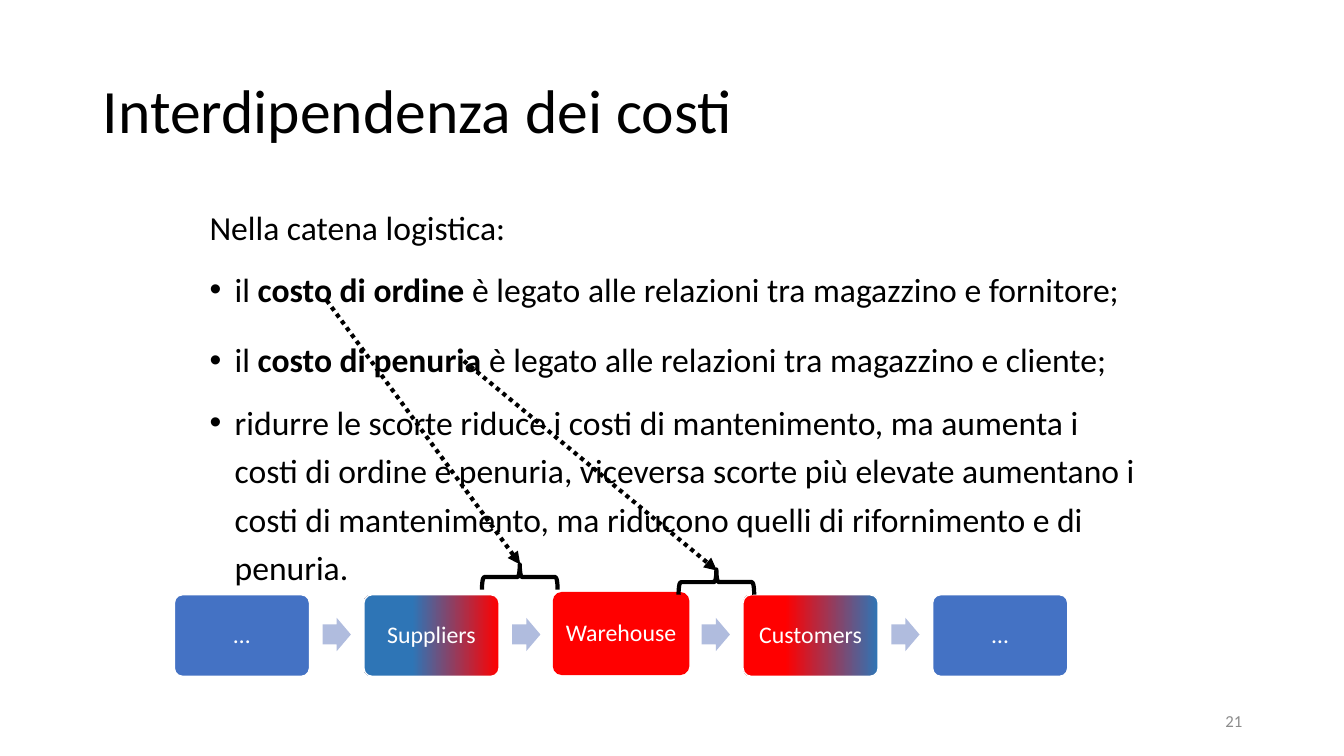
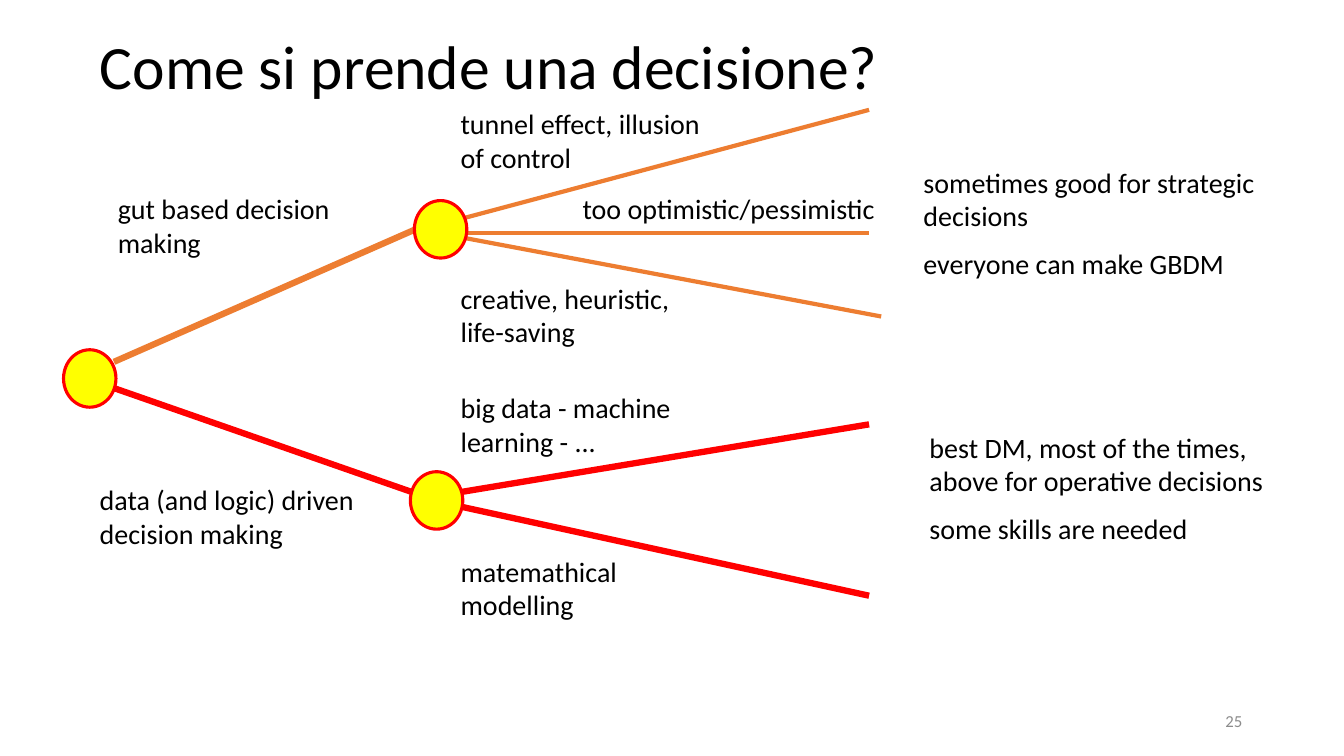
from dataclasses import dataclass
from typing import NamedTuple, Optional

import pptx
import pptx.dml.color
import pptx.enum.dml
import pptx.enum.shapes
import pptx.enum.text
import pptx.oxml
import pptx.oxml.ns
import pptx.oxml.xmlchemy
import pptx.util
from pptx.util import Inches

RGB = pptx.dml.color.RGBColor
Shapes = pptx.enum.shapes.MSO_SHAPE
Align = pptx.enum.text.PP_ALIGN
Anchor = pptx.enum.text.MSO_ANCHOR


@dataclass(frozen=True)
class Theme:
    font: str = "Calibri"
    title_size: float = 44
    body_size: float = 24
    label_size: float = 20
    stage_size: float = 17
    number_size: float = 12
    black: RGB = RGB(0, 0, 0)
    white: RGB = RGB(255, 255, 255)
    gray: RGB = RGB.from_string("8C8C8C")
    blue: RGB = RGB.from_string("4472C4")
    deep_blue: RGB = RGB.from_string("2E75B6")
    pale_blue: RGB = RGB.from_string("B0BCDE")
    red: RGB = RGB.from_string("FF0000")
    orange: RGB = RGB.from_string("ED7D31")
    yellow: RGB = RGB.from_string("FFFF00")


THEME = Theme()


class Box(NamedTuple):
    left: float
    top: float
    width: float
    height: float

    def emu(self) -> list[int]:
        return [Inches(value) for value in self]


class Paragraph(NamedTuple):
    """Text in which *asterisks* enclose bold words."""
    text: str
    spacing: float = 1.0
    bullet: bool = False
    hanging: float = 0


class Stage(NamedTuple):
    name: str
    fill: RGB
    border: RGB
    lift: float = 0
    gradient_to: Optional[RGB] = None
    gradient_end: float = 1


class Branch(NamedTuple):
    start: tuple[float, float]
    end: tuple[float, float]
    color: RGB
    width: float


class Label(NamedTuple):
    box: Box
    lines: tuple[str, ...]


STAGES = (
    Stage("…", THEME.blue, THEME.white),
    Stage("Suppliers", THEME.red, THEME.white, 0, THEME.deep_blue, 0.64),
    Stage("Warehouse", THEME.red, THEME.red, 0.02),
    Stage("Customers", THEME.deep_blue, THEME.white, 0, THEME.red, 0.69),
    Stage("…", THEME.blue, THEME.white),
)
STAGE_LEFT, STAGE_TOP, STAGE_PITCH = 1.73, 5.9, 1.88

COST_NOTES = (
    Paragraph("Nella catena logistica:", 1.4, hanging=0.25),
    Paragraph("il *costo di ordine *è legato alle relazioni tra magazzino e fornitore;",
              1.2, True, 0.25),
    Paragraph("il *costo di penuria *è legato alle relazioni tra magazzino e cliente;",
              1.4, True, 0.25),
    Paragraph("ridurre le scorte riduce i costi di mantenimento, ma aumenta i costi di "
              "ordine e penuria, viceversa scorte più elevate aumentano i costi di "
              "mantenimento, ma riducono quelli di rifornimento e di penuria.",
              1.2, True, 0.25),
)

BRANCHES = (
    Branch((1.13, 3.59), (4.11, 2.28), THEME.orange, 4.5),
    Branch((4.54, 2.18), (8.62, 1.09), THEME.orange, 3),
    Branch((4.47, 2.31), (8.62, 2.31), THEME.orange, 3),
    Branch((4.55, 2.35), (8.74, 3.14), THEME.orange, 3),
    Branch((1.13, 3.85), (4.11, 4.89), THEME.red, 4.5),
    Branch((4.52, 4.89), (8.62, 4.21), THEME.red, 4.5),
    Branch((4.45, 5), (8.62, 5.91), THEME.red, 4.5),
)
DECISION_POINTS = ((0.63, 3.47), (4.11, 1.99), (4.07, 4.68))
LABELS = (
    Label(Box(1.07, 1.85, 2.32, 0.77), ("gut based decision making",)),
    Label(Box(0.89, 4.74, 2.99, 0.77), ("data (and logic) driven decision making",)),
    Label(Box(4.47, 1.01, 2.68, 0.77), ("tunnel effect, illusion of control",)),
    Label(Box(5.68, 1.85, 3.64, 0.44), ("too optimistic/pessimistic",)),
    Label(Box(4.47, 2.74, 2.68, 0.77), ("creative, heuristic, life-saving",)),
    Label(Box(4.47, 3.83, 2.68, 0.77), ("big data - machine learning - ...",)),
    Label(Box(4.47, 5.45, 2.79, 0.77), ("matemathical modelling",)),
    Label(Box(9.06, 1.59, 3.73, 1.28),
          ("sometimes good for strategic decisions", "everyone can make GBDM")),
    Label(Box(9.12, 4.22, 3.51, 1.28),
          ("best DM, most of the times, above for operative decisions",
           "some skills are needed")),
)


def add_xml(parent: pptx.oxml.xmlchemy.BaseOxmlElement, tag: str, **attributes: str) -> None:
    element = pptx.oxml.parse_xml(f"<{tag} {pptx.oxml.ns.nsdecls('a')}/>")
    for key, value in attributes.items():
        element.set(key, value)
    parent.append(element)


def write(holder, *paragraphs: Paragraph, size: float, color: RGB = THEME.black,
          align: Align = Align.LEFT, anchor: Anchor = Anchor.TOP,
          space_before: float = 0, inset: tuple[float, float] = (0.1, 0.05)) -> None:
    """Fill a shape, text box or placeholder with formatted paragraphs."""
    frame = holder.text_frame
    frame.word_wrap = True
    frame.auto_size = pptx.enum.text.MSO_AUTO_SIZE.NONE
    frame.vertical_anchor = anchor
    frame.margin_left = frame.margin_right = Inches(inset[0])
    frame.margin_top = frame.margin_bottom = Inches(inset[1])
    for index, item in enumerate(paragraphs):
        line = frame.add_paragraph() if index else frame.paragraphs[0]
        line.alignment = align
        line.line_spacing = item.spacing
        line.space_before = pptx.util.Pt(space_before if index else 0)
        properties = line._p.get_or_add_pPr()
        if item.hanging:
            properties.set("marL", str(Inches(item.hanging)))
            properties.set("indent", str(-Inches(item.hanging)))
        if item.bullet:
            add_xml(properties, "a:buFont", typeface="Arial")
            add_xml(properties, "a:buChar", char="•")
        for position, words in enumerate(item.text.split("*")):
            run = line.add_run()
            run.text = words
            run.font.name = THEME.font
            run.font.size = pptx.util.Pt(size)
            run.font.bold = position % 2 == 1
            run.font.color.rgb = color


def add_text(slide: pptx.slide.Slide, box: Box, *paragraphs: Paragraph, **style) -> None:
    write(slide.shapes.add_textbox(*box.emu()), *paragraphs, **style)


def add_shape(slide: pptx.slide.Slide, kind: Shapes, box: Box, fill: Optional[RGB] = None,
              border: Optional[RGB] = None, border_width: float = 1,
              adjustments: tuple[float, ...] = ()) -> pptx.shapes.autoshape.Shape:
    shape = slide.shapes.add_shape(kind, *box.emu())
    shape.shadow.inherit = False
    for index, value in enumerate(adjustments):
        shape.adjustments[index] = value
    if fill is None:
        shape.fill.background()
    else:
        shape.fill.solid()
        shape.fill.fore_color.rgb = fill
    if border is None:
        shape.line.fill.background()
    else:
        shape.line.color.rgb = border
        shape.line.width = pptx.util.Pt(border_width)
    return shape


def add_line(slide: pptx.slide.Slide, start: tuple[float, float], end: tuple[float, float],
             color: RGB, width: float, dotted_arrow: bool = False) -> None:
    line = slide.shapes.add_connector(
        pptx.enum.shapes.MSO_CONNECTOR.STRAIGHT, *map(Inches, start + end))
    line.line.color.rgb = color
    line.line.width = pptx.util.Pt(width)
    if dotted_arrow:
        line.line.dash_style = pptx.enum.dml.MSO_LINE.ROUND_DOT
        add_xml(line.line._get_or_add_ln(), "a:tailEnd", type="triangle")
    add_xml(line._element.spPr, "a:effectLst")


def add_titled_slide(deck: pptx.presentation.Presentation, title: str, box: Box,
                     number: int) -> pptx.slide.Slide:
    slide = deck.slides.add_slide(deck.slide_layouts.get_by_name("Title Only"))
    heading = slide.shapes.title
    heading.left, heading.top, heading.width, heading.height = box.emu()
    write(heading, Paragraph(title, 0.9), size=THEME.title_size, anchor=Anchor.MIDDLE)
    add_text(slide, Box(9.42, 6.95, 3, 0.4), Paragraph(str(number)), size=THEME.number_size,
             color=THEME.gray, align=Align.RIGHT, anchor=Anchor.MIDDLE)
    return slide


def add_stage(slide: pptx.slide.Slide, stage: Stage, left: float) -> None:
    block = add_shape(slide, Shapes.ROUNDED_RECTANGLE,
                      Box(left, STAGE_TOP - stage.lift, 1.34, 0.81),
                      stage.fill, stage.border, adjustments=(0.1,))
    if stage.gradient_to is not None:
        block.fill.gradient()
        block.fill.gradient_angle = 180
        first, last = block.fill.gradient_stops
        first.color.rgb, first.position = stage.fill, 0
        last.color.rgb, last.position = stage.gradient_to, stage.gradient_end
    write(block, Paragraph(stage.name, 0.9), size=THEME.stage_size, color=THEME.white,
          align=Align.CENTER, anchor=Anchor.MIDDLE, inset=(0.07, 0.07))


def build_costs(deck: pptx.presentation.Presentation) -> None:
    slide = add_titled_slide(deck, "Interdipendenza dei costi", Box(0.92, 0.4, 11.5, 1.45), 21)
    add_text(slide, Box(1.98, 1.84, 9.5, 4.42), *COST_NOTES,
             size=THEME.body_size, space_before=10)
    for index, stage in enumerate(STAGES):
        left = STAGE_LEFT + index * STAGE_PITCH
        add_stage(slide, stage, left)
        if index < len(STAGES) - 1:
            add_shape(slide, Shapes.RIGHT_ARROW, Box(left + 1.47, 6.13, 0.28, 0.33),
                      THEME.pale_blue, adjustments=(0.6, 0.5))
    for cost, link in (((3.24, 2.98), (5.16, 5.6)), ((4.6, 3.58), (7.11, 5.66))):
        add_line(slide, cost, link, THEME.black, 3, dotted_arrow=True)
    for left, top in ((5.03, 5.35), (6.98, 5.4)):
        brace = add_shape(slide, Shapes.LEFT_BRACE, Box(left, top, 0.25, 0.75),
                          border=THEME.black, border_width=3)
        brace.rotation = 90


def build_decisions(deck: pptx.presentation.Presentation) -> None:
    slide = add_titled_slide(deck, "Come si prende una decisione?",
                             Box(0.89, 0.25, 9.21, 0.88), 25)
    for branch in BRANCHES:
        add_line(slide, *branch)
    for left, top in DECISION_POINTS:
        add_shape(slide, Shapes.OVAL, Box(left, top, 0.52, 0.57), THEME.yellow, THEME.red, 2.25)
    for label in LABELS:
        add_text(slide, label.box, *map(Paragraph, label.lines),
                 size=THEME.label_size, space_before=10)


def main() -> None:
    deck = pptx.Presentation()
    deck.slide_width, deck.slide_height = Inches(13.33), Inches(7.5)
    build_costs(deck)
    build_decisions(deck)
    deck.save("out.pptx")


if __name__ == "__main__":
    main()
